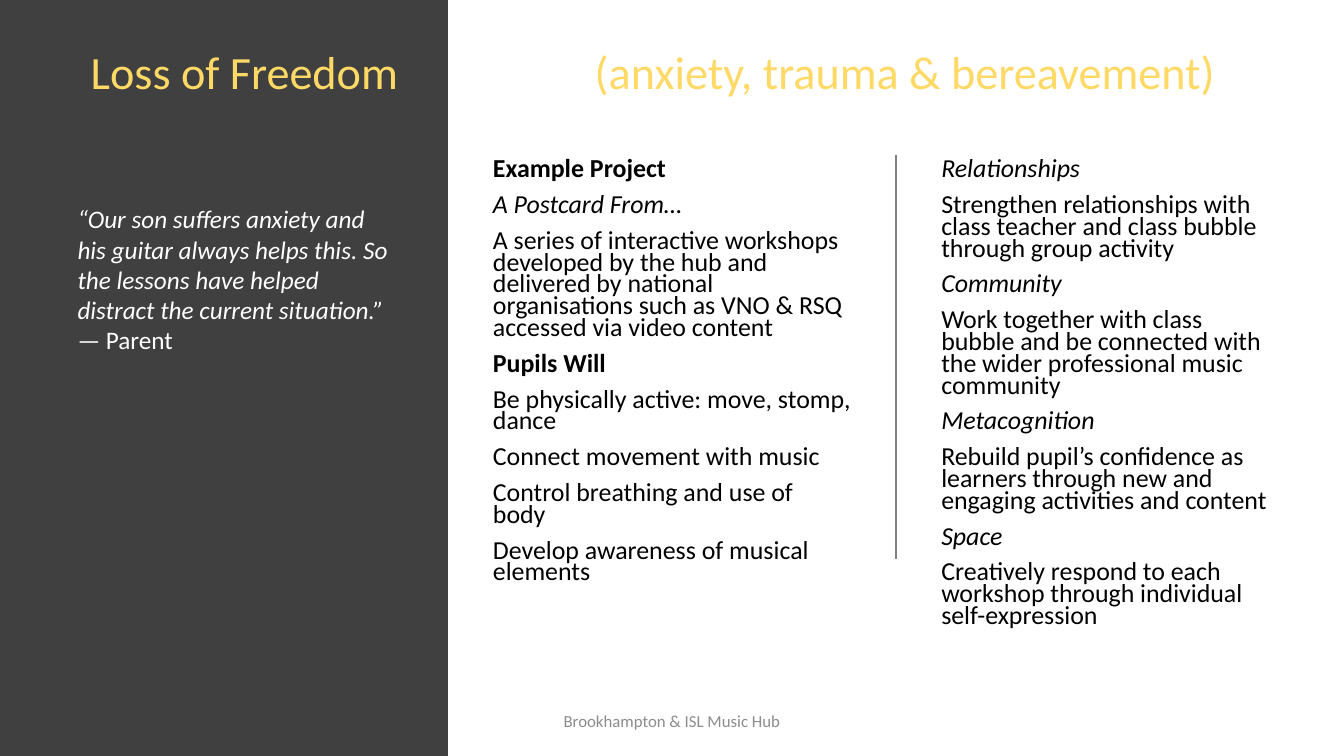
from lxml.etree import SubElement
from pptx import Presentation
from pptx.dml.color import RGBColor
from pptx.enum.shapes import MSO_CONNECTOR, MSO_SHAPE
from pptx.enum.text import MSO_ANCHOR, MSO_AUTO_SIZE, PP_ALIGN
from pptx.oxml.ns import qn
from pptx.util import Pt

SLIDE_WIDTH, SLIDE_HEIGHT = 960, 540
PANEL_WIDTH = 320
COLUMN_TOP, COLUMN_HEIGHT = 111, 343
TITLE_TABS = (288, 360)

PROJECT = [
    ("Example Project", "bold"),
    ("A Postcard From…", "italic"),
    ("A series of interactive workshops developed by the hub and delivered by "
     "national organisations such as VNO & RSQ accessed via video content", ""),
    ("Pupils Will", "bold"),
    ("Be physically active: move, stomp, dance", ""),
    ("Connect movement with music", ""),
    ("Control breathing and use of body", ""),
    ("Develop awareness of musical elements", ""),
]
OUTCOMES = [
    ("Relationships", "italic"),
    ("Strengthen relationships with class teacher and class bubble through group activity", ""),
    ("Community", "italic"),
    ("Work together with class bubble and be connected with the wider "
     "professional music community", ""),
    ("Metacognition", "italic"),
    ("Rebuild pupil’s confidence as learners through new and engaging activities and content", ""),
    ("Space", "italic"),
    ("Creatively respond to each workshop through individual self-expression", ""),
]
QUOTE = ("“Our son suffers anxiety and his guitar always helps this. "
         "So the lessons have helped distract the current situation.”")


def color(value):
    return RGBColor.from_string(value)


def format_run(run, size, value, style=""):
    run.font.name = "Calibri"
    run.font.size = Pt(size)
    run.font.color.rgb = color(value)
    run.font.bold = style == "bold"
    run.font.italic = style == "italic"


def add_text_frame(slide, left, top, width, height):
    text_frame = slide.shapes.add_textbox(Pt(left), Pt(top), Pt(width), Pt(height)).text_frame
    text_frame.word_wrap = True
    return text_frame


def add_panel(slide, left, top, width, height):
    """Add the dark side panel behind everything else."""
    panel = slide.shapes.add_shape(
        MSO_SHAPE.RECTANGLE, Pt(left), Pt(top), Pt(width), Pt(height))
    panel.shadow.inherit = False
    panel.fill.solid()
    panel.fill.fore_color.rgb = color("404040")
    panel.line.fill.background()
    slide.shapes._spTree.insert(2, panel._element)


def set_title(slide, left, top, width, height):
    title = slide.shapes.title
    title.left, title.top, title.width, title.height = map(Pt, (left, top, width, height))
    text_frame = title.text_frame
    text_frame.text = "Loss of Freedom \t\t(anxiety, trauma & bereavement)"
    text_frame.word_wrap = True
    text_frame.auto_size = MSO_AUTO_SIZE.NONE
    text_frame.vertical_anchor = MSO_ANCHOR.TOP
    paragraph = text_frame.paragraphs[0]
    paragraph.alignment = PP_ALIGN.LEFT
    paragraph.line_spacing = 0.9
    tab_list = SubElement(paragraph._p.get_or_add_pPr(), qn("a:tabLst"))
    for position in TITLE_TABS:
        SubElement(tab_list, qn("a:tab"), pos=str(Pt(position)), algn="l")
    format_run(paragraph.runs[0], 33, "FFD966")


def add_column(slide, entries, left, top, width, height):
    text_frame = add_text_frame(slide, left, top, width, height)
    text_frame.text = "\n".join(text for text, _ in entries)
    for paragraph, (_, style) in zip(text_frame.paragraphs, entries):
        paragraph.line_spacing = 0.7
        paragraph.space_before = Pt(10)
        format_run(paragraph.runs[0], 18.5, "000000", style)


def add_divider(slide, left, top, height):
    divider = slide.shapes.add_connector(
        MSO_CONNECTOR.STRAIGHT, Pt(left), Pt(top), Pt(left), Pt(top + height))
    divider.line.color.rgb = color("808080")
    divider.line.width = Pt(1)
    SubElement(divider._element.spPr, qn("a:effectLst"))


def add_footer(slide, left, top, width, height):
    text_frame = add_text_frame(slide, left, top, width, height)
    text_frame.vertical_anchor = MSO_ANCHOR.MIDDLE
    text_frame.text = "Brookhampton & ISL Music Hub"
    paragraph = text_frame.paragraphs[0]
    paragraph.alignment = PP_ALIGN.CENTER
    format_run(paragraph.runs[0], 12, "8C8C8C")


def add_quote(slide, left, top, width, height):
    text_frame = add_text_frame(slide, left, top, width, height)
    paragraph = text_frame.paragraphs[0]
    for text, style in ((QUOTE, "italic"), (" — Parent", "")):
        run = paragraph.add_run()
        run.text = text
        format_run(run, 18, "FFFFFF", style)


def main():
    presentation = Presentation()
    presentation.slide_width = Pt(SLIDE_WIDTH)
    presentation.slide_height = Pt(SLIDE_HEIGHT)
    slide = presentation.slides.add_slide(presentation.slide_layouts.get_by_name("Title Only"))
    add_panel(slide, 0, 0, PANEL_WIDTH, SLIDE_HEIGHT)
    set_title(slide, 57.6, 31.7, 890, 100)
    add_column(slide, PROJECT, 345, COLUMN_TOP, 270, COLUMN_HEIGHT)
    add_divider(slide, 640, COLUMN_TOP, 288)
    add_column(slide, OUTCOMES, 665.3, COLUMN_TOP, 252, COLUMN_HEIGHT)
    add_footer(slide, 318, 500.5, 324, 28.8)
    add_quote(slide, 48.3, 142, 236, 138)
    presentation.save("out.pptx")


if __name__ == "__main__":
    main()
